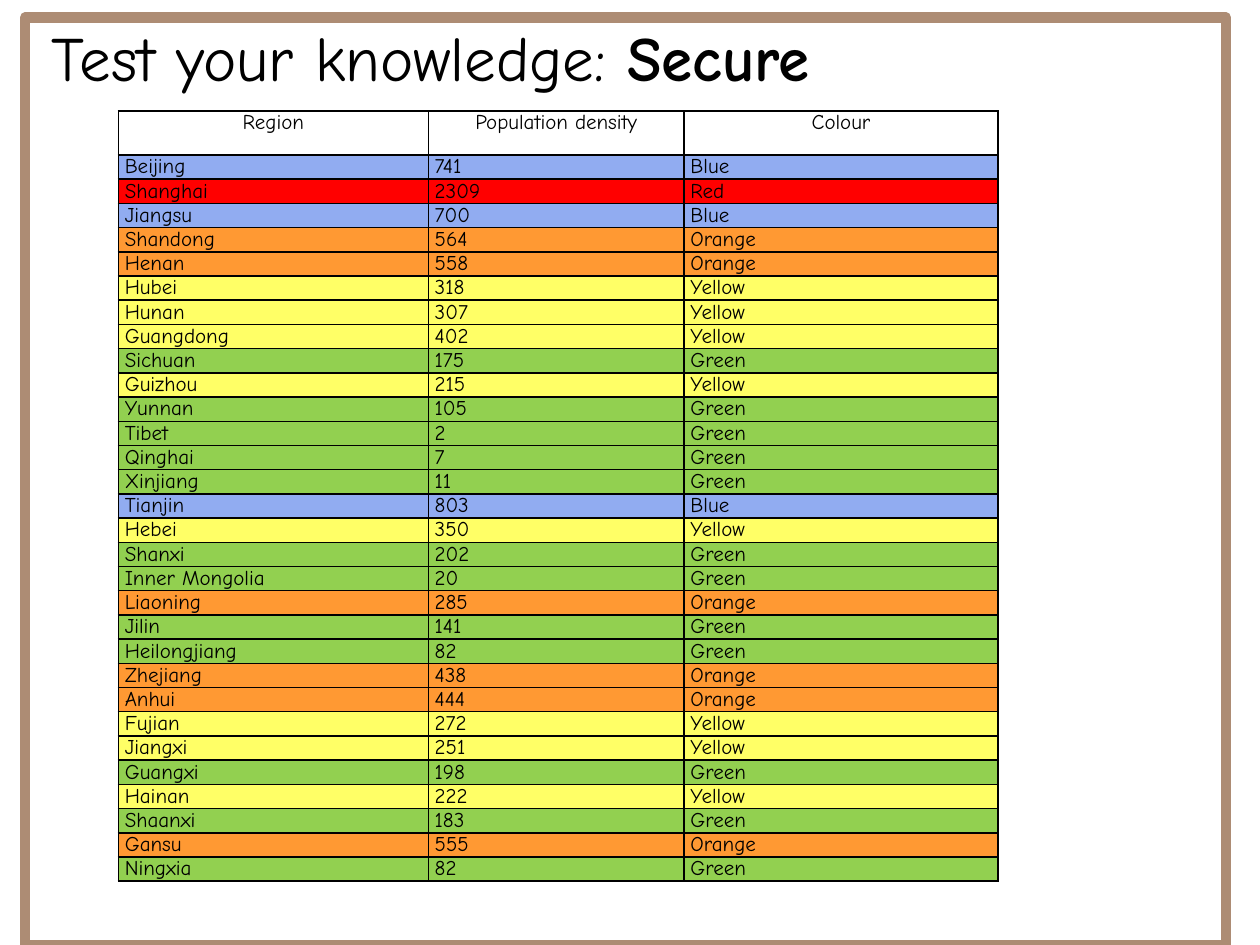
from lxml import etree
from pptx import Presentation
from pptx import util as u
from pptx.dml.color import RGBColor
from pptx.enum import shapes, text
from pptx.oxml import ns

HEADINGS = ("Region", "Population density", "Colour")
DENSITIES = [
    ("Beijing", 741, "Blue"), ("Shanghai", 2309, "Red"),
    ("Jiangsu", 700, "Blue"), ("Shandong", 564, "Orange"),
    ("Henan", 558, "Orange"), ("Hubei", 318, "Yellow"),
    ("Hunan", 307, "Yellow"), ("Guangdong", 402, "Yellow"),
    ("Sichuan", 175, "Green"), ("Guizhou", 215, "Yellow"),
    ("Yunnan", 105, "Green"), ("Tibet", 2, "Green"),
    ("Qinghai", 7, "Green"), ("Xinjiang", 11, "Green"),
    ("Tianjin", 803, "Blue"), ("Hebei", 350, "Yellow"),
    ("Shanxi", 202, "Green"), ("Inner Mongolia", 20, "Green"),
    ("Liaoning", 285, "Orange"), ("Jilin", 141, "Green"),
    ("Heilongjiang", 82, "Green"), ("Zhejiang", 438, "Orange"),
    ("Anhui", 444, "Orange"), ("Fujian", 272, "Yellow"),
    ("Jiangxi", 251, "Yellow"), ("Guangxi", 198, "Green"),
    ("Hainan", 222, "Yellow"), ("Shaanxi", 183, "Green"),
    ("Gansu", 555, "Orange"), ("Ningxia", 82, "Green"),
]
BAND_FILLS = {"Blue": "91ACF1", "Red": "FF0000", "Orange": "FF9933",
              "Yellow": "FFFF66", "Green": "92D050"}


def colour(hex_value):
    return RGBColor.from_string(hex_value)


def apply(target, values):
    for name, value in values.items():
        setattr(target, name, value)


class QuizSlide:
    font = "Comic Neue"
    ink = "000000"
    paper = "FFFFFF"
    border = "AD8C74"
    cell_format = {"margin_left": u.Inches(0.05), "margin_right": u.Inches(0.05),
                   "margin_top": 0, "margin_bottom": 0}

    def __init__(self, slide):
        self.slide = slide

    def add_words(self, paragraph, wording, size, bold=False):
        run = paragraph.add_run()
        run.text = wording
        apply(run.font, {"name": self.font, "size": u.Pt(size), "bold": bold})
        run.font.color.rgb = colour(self.ink)

    def place(self, left, top, width, height):
        return [u.Inches(length) for length in (left, top, width, height)]

    def title(self, box, plain, strong):
        heading = self.slide.shapes.title
        apply(heading, dict(zip(("left", "top", "width", "height"), self.place(*box))))
        apply(heading.text_frame, {"word_wrap": True,
                                   "auto_size": text.MSO_AUTO_SIZE.NONE,
                                   "vertical_anchor": text.MSO_ANCHOR.MIDDLE})
        line = heading.text_frame.paragraphs[0]
        apply(line, {"alignment": text.PP_ALIGN.LEFT, "line_spacing": 0.9})
        self.add_words(line, plain, 36)
        self.add_words(line, strong, 36, bold=True)

    def frame(self, box):
        """Draw the page border behind the title."""
        page = self.slide.shapes.add_shape(
            shapes.MSO_SHAPE.RECTANGLE, *self.place(*box))
        page.shadow.inherit = False
        page.fill.solid()
        page.fill.fore_color.rgb = colour(self.paper)
        page.line.color.rgb = colour(self.border)
        page.line.width = u.Pt(6)
        self.slide.shapes.title.element.addprevious(page.element)

    def outline(self, cell):
        properties = cell._tc.get_or_add_tcPr()
        for position, side in enumerate(("lnL", "lnR", "lnT", "lnB")):
            edge = etree.Element(ns.qn(f"a:{side}"), w=str(u.Pt(1)))
            solid = etree.SubElement(edge, ns.qn("a:solidFill"))
            etree.SubElement(solid, ns.qn("a:srgbClr"), val=self.ink)
            properties.insert(position, edge)

    def cell(self, cell, wording, align, fill=None):
        apply(cell, self.cell_format)
        line = cell.text_frame.paragraphs[0]
        line.alignment = align
        self.add_words(line, wording, 12)
        if fill:
            cell.fill.solid()
            cell.fill.fore_color.rgb = colour(fill)
        else:
            cell.fill.background()
        self.outline(cell)

    def table(self, left, top, widths, header_height, row_height):
        height = header_height + row_height * len(DENSITIES)
        grid = self.slide.shapes.add_table(
            len(DENSITIES) + 1, len(HEADINGS),
            *self.place(left, top, sum(widths), height)).table
        apply(grid, {"first_row": False, "horz_banding": False})
        for column, width in zip(grid.columns, widths):
            column.width = u.Inches(width)
        for row in grid.rows:
            row.height = u.Inches(row_height)
        grid.rows[0].height = u.Inches(header_height)

        for column, heading in enumerate(HEADINGS):
            self.cell(grid.cell(0, column), heading, text.PP_ALIGN.CENTER)
        for row, region in enumerate(DENSITIES, start=1):
            for column, value in enumerate(region):
                self.cell(grid.cell(row, column), str(value),
                          text.PP_ALIGN.LEFT, BAND_FILLS[region[-1]])


def main():
    deck = Presentation()
    apply(deck, {"slide_width": u.Inches(10), "slide_height": u.Inches(7.5)})
    quiz = QuizSlide(deck.slides.add_slide(deck.slide_layouts[5]))
    quiz.frame((0.2, 0.14, 9.53, 7.36))
    quiz.title((0.31, -0.14, 9, 1.25), "Test your knowledge: ", "Secure")
    quiz.table(0.94, 0.88, (2.46, 2.03, 2.49), 0.35, 0.19)
    deck.save("out.pptx")


if __name__ == "__main__":
    main()
